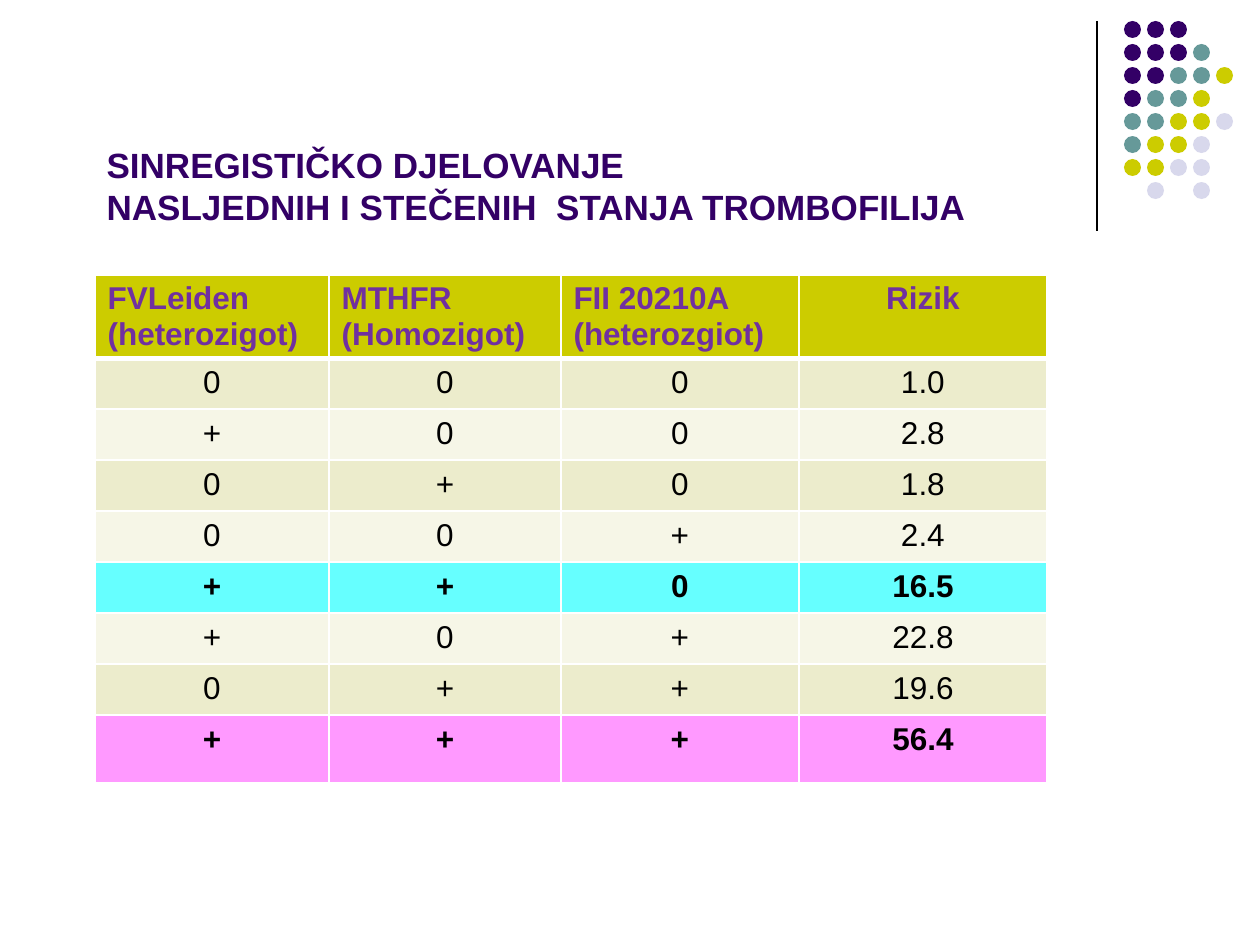
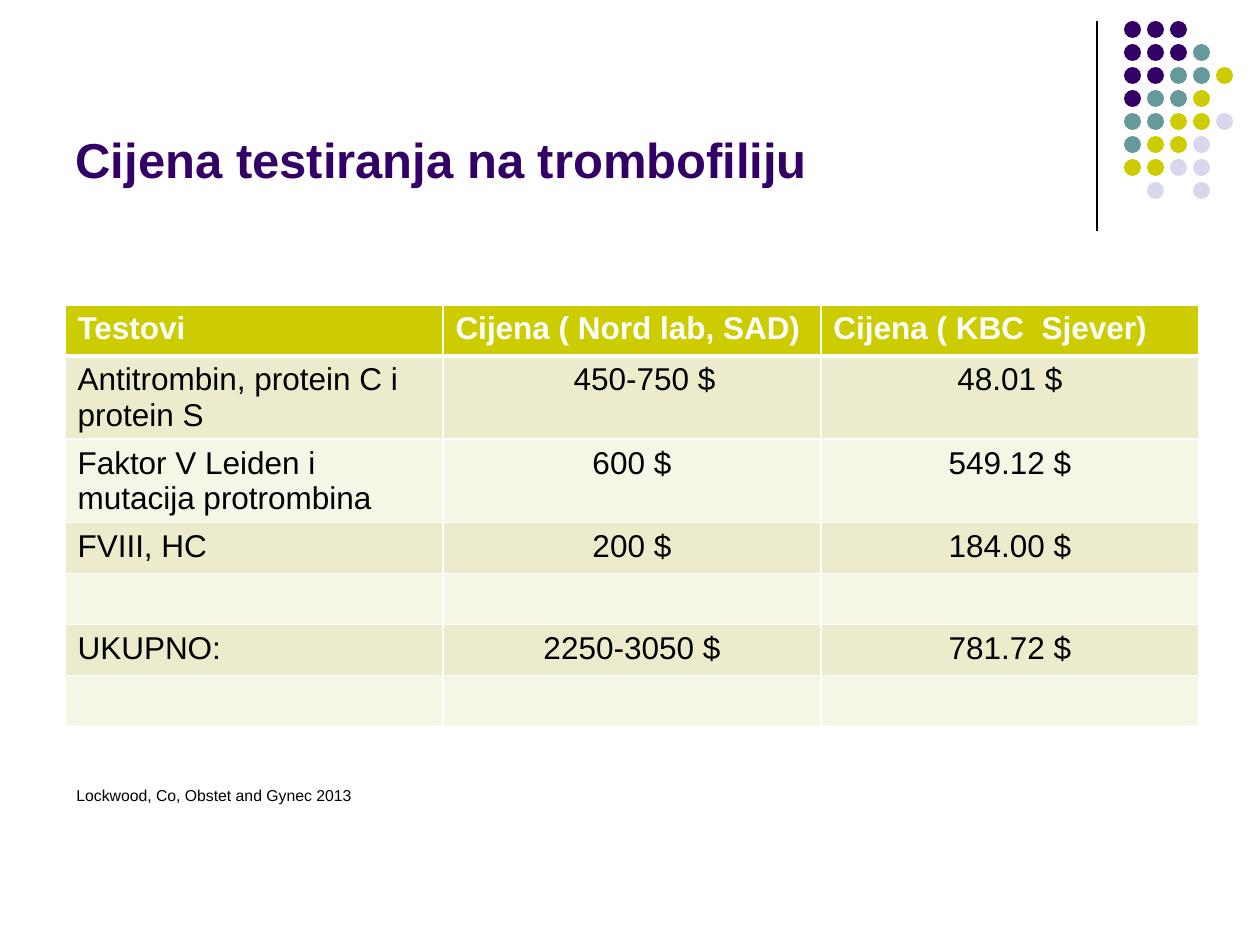
from lxml import etree
from pptx import Presentation
from pptx import util as u
from pptx.dml import color
from pptx.enum import shapes, text
from pptx.oxml import ns

PX = 914400 // 126  # one px in EMU
FONT = "Arial"
PURPLE, TEAL, OLIVE, LILAC = "330066", "669999", "CCCC00", "D8D8EC"
BLACK, WHITE, VIOLET = "000000", "FFFFFF", "7030A0"
BANDS = ("ECECCC", "F6F6E7")
CYAN, PINK = "66FFFF", "FF99FF"

# Corner ornament: one letter per dot
DOT_COLORS = {"P": PURPLE, "T": TEAL, "O": OLIVE, "L": LILAC}
DOT_ROWS = ("PPP", "PPPT", "PPTTO", "PTTO", "TTOOL", "TOOL", "OOLL", ".L.L")
DOT_SIZE, DOT_PITCH = 17, 23


def px(*lengths):
    return [u.Emu(length * PX) for length in lengths]


def rgb(value):
    return color.RGBColor.from_string(value)


def write(frame, content, size=18, ink=BLACK, bold=False, centered=False):
    frame.word_wrap = True
    para = frame.paragraphs[0]
    para.text = content
    para.alignment = text.PP_ALIGN.CENTER if centered else text.PP_ALIGN.LEFT
    for span in para.runs:
        span.font.name = FONT
        span.font.size = u.Pt(size)
        span.font.bold = bold
        span.font.color.rgb = rgb(ink)


def set_borders(cell, **widths):
    properties = cell._tc.get_or_add_tcPr()
    for side in "LRTB":
        line = etree.SubElement(properties, ns.qn("a:ln" + side),
                                w=str(u.Pt(widths.get(side, 1))))
        fill = etree.SubElement(line, ns.qn("a:solidFill"))
        etree.SubElement(fill, ns.qn("a:srgbClr"), val=WHITE)


class SlideBuilder:
    def __init__(self, deck):
        self.deck = deck
        self.page = None

    def start(self, title, box, size):
        self.page = self.deck.slides.add_slide(self.deck.slide_layouts[5])
        self.ornament()
        holder = self.page.shapes.title
        holder.left, holder.top, holder.width, holder.height = px(*box)
        frame = holder.text_frame
        frame.auto_size = text.MSO_AUTO_SIZE.NONE
        frame.vertical_anchor = text.MSO_ANCHOR.BOTTOM
        write(frame, title, size, PURPLE, bold=True)

    def ornament(self):
        self.line(1097, 21, 1097, 231)
        group = self.page.shapes.add_group_shape()
        for row, letters in enumerate(DOT_ROWS):
            for column, letter in enumerate(letters):
                if letter in DOT_COLORS:
                    self.dot(group, 1124 + column * DOT_PITCH,
                             21 + row * DOT_PITCH, DOT_COLORS[letter])

    def line(self, *ends):
        rule = self.page.shapes.add_connector(
            shapes.MSO_CONNECTOR.STRAIGHT, *px(*ends))
        rule.line.color.rgb = rgb(BLACK)
        rule.line.width = u.Pt(0.75)
        etree.SubElement(rule._element.spPr, ns.qn("a:effectLst"))

    def dot(self, group, left, top, fill):
        dot = group.shapes.add_shape(shapes.MSO_SHAPE.OVAL,
                                     *px(left, top, DOT_SIZE, DOT_SIZE))
        dot.shadow.inherit = False
        dot.fill.solid()
        dot.fill.fore_color.rgb = rgb(fill)
        dot.line.fill.background()

    def table(self, left, top, widths, heights, rows, header_ink,
              left_columns=(), centered_headers=(), highlights=None):
        """Banded table; highlights maps a row number to its bold fill."""
        highlights = highlights or {}
        table = self.page.shapes.add_table(
            len(rows), len(widths),
            *px(left, top, sum(widths), sum(heights))).table
        table.horz_banding = False
        for column, width in zip(table.columns, px(*widths)):
            column.width = width
        for row, height in zip(table.rows, px(*heights)):
            row.height = height
        for r, values in enumerate(rows):
            for c, value in enumerate(values):
                cell = table.cell(r, c)
                set_borders(cell, T=3 if r == 1 else 1, B=3 if r == 0 else 1)
                cell.fill.solid()
                if r == 0:
                    fill, ink, bold = OLIVE, header_ink, True
                    centered = c in centered_headers
                else:
                    fill = highlights.get(r, BANDS[(r - 1) % 2])
                    ink, bold = BLACK, r in highlights
                    centered = c not in left_columns
                cell.fill.fore_color.rgb = rgb(fill)
                write(cell.text_frame, value, 18, ink, bold, centered)
        return table

    def note(self, content, box, size):
        frame = self.page.shapes.add_textbox(*px(*box)).text_frame
        write(frame, content, size)


def risk_slide(builder):
    builder.start("SINREGISTIČKO DJELOVANJE \vNASLJEDNIH I STEČENIH  STANJA "
                  "TROMBOFILIJA", (94, 16, 1008, 218), 20)
    rows = [
        ("FVLeiden (heterozigot)", "MTHFR (Homozigot)",
         "FII 20210A (heterozgiot)", "Rizik"),
        ("0", "0", "0", "1.0"),
        ("+", "0", "0", "2.8"),
        ("0", "+", "0", "1.8"),
        ("0", "0", "+", "2.4"),
        ("+", "+", "0", "16.5"),
        ("+", "0", "+", "22.8"),
        ("0", "+", "+", "19.6"),
        ("+", "+", "+", "56.4"),
    ]
    builder.table(95, 275, (234, 232, 238, 248), [82] + [51] * 7 + [68], rows,
                  VIOLET, centered_headers=(3,), highlights={5: CYAN, 8: PINK})


def price_slide(builder):
    builder.start("Cijena testiranja na trombofiliju", (63, 16, 1040, 179), 28)
    rows = [
        ("Testovi", "Cijena ( Nord lab, SAD)", "Cijena ( KBC  Sjever)"),
        ("Antitrombin, protein C i protein S", "450-750 $", "48.01 $"),
        ("Faktor V Leiden i mutacija protrombina", "600 $", "549.12 $"),
        ("FVIII, HC", "200 $", "184.00 $"),
        ("", "", ""),
        ("UKUPNO:", "2250-3050 $", "781.72 $"),
        ("", "", ""),
    ]
    table = builder.table(65, 305, [378] * 3, [51, 82, 83] + [51] * 4, rows,
                          WHITE, left_columns=(0,))
    # The price range sits slightly right of centre
    table.cell(1, 1).margin_left = px(38)[0]
    builder.note("Lockwood, Co, Obstet and Gynec 2013", (64, 780, 1032, 32), 9)


def main():
    deck = Presentation()
    deck.slide_width, deck.slide_height = u.Inches(10), u.Inches(7.5)
    builder = SlideBuilder(deck)
    risk_slide(builder)
    price_slide(builder)
    deck.save("out.pptx")


if __name__ == "__main__":
    main()
